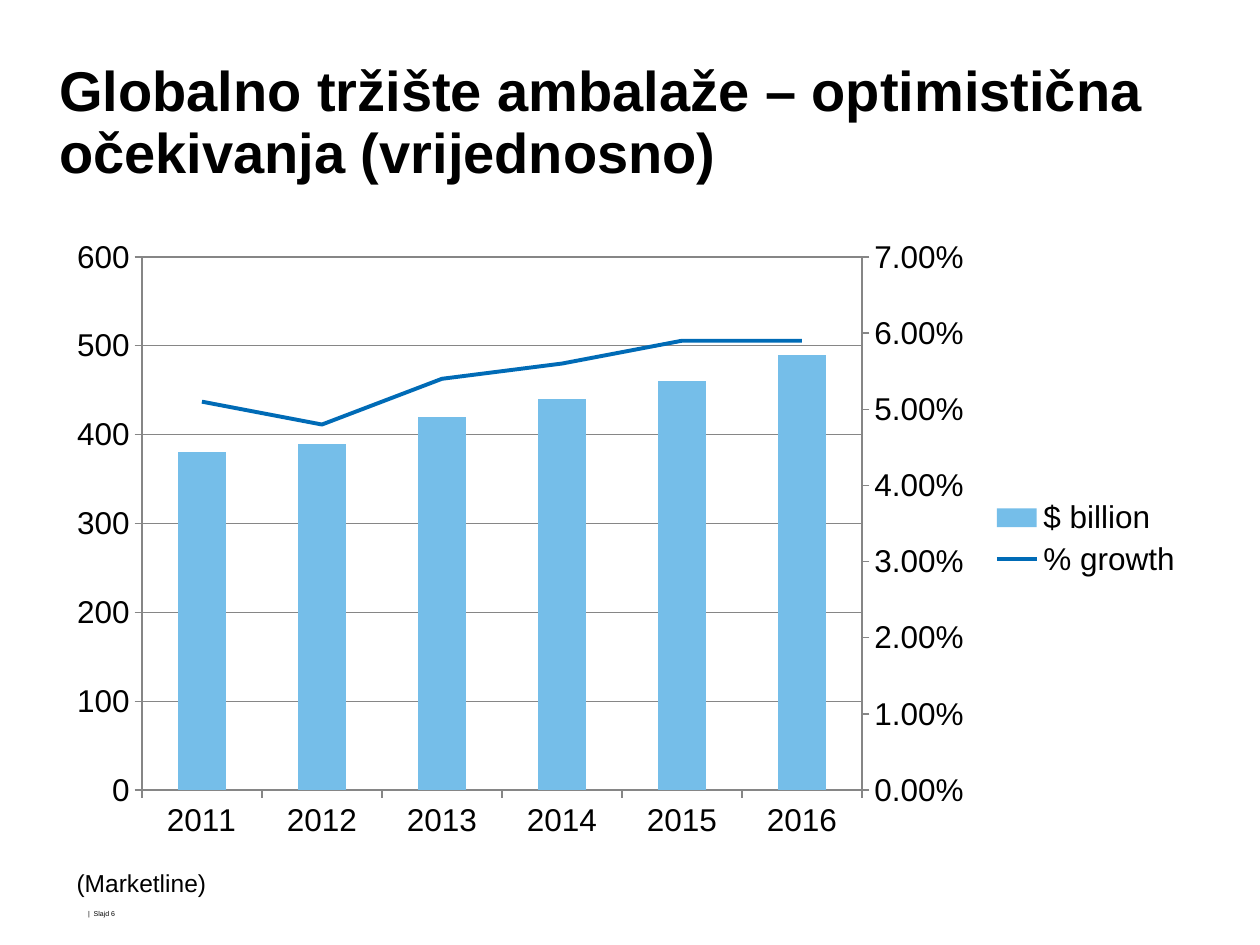
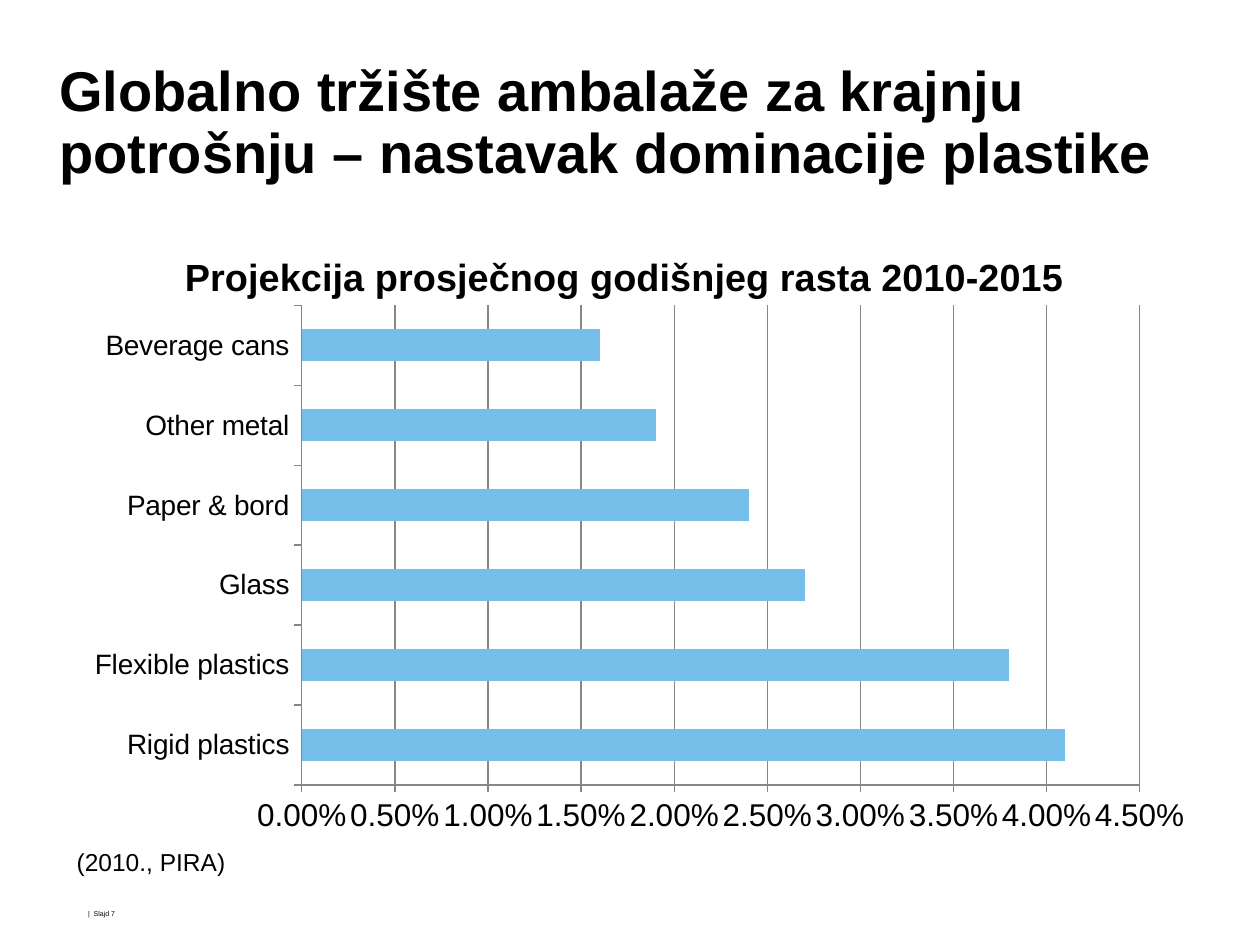
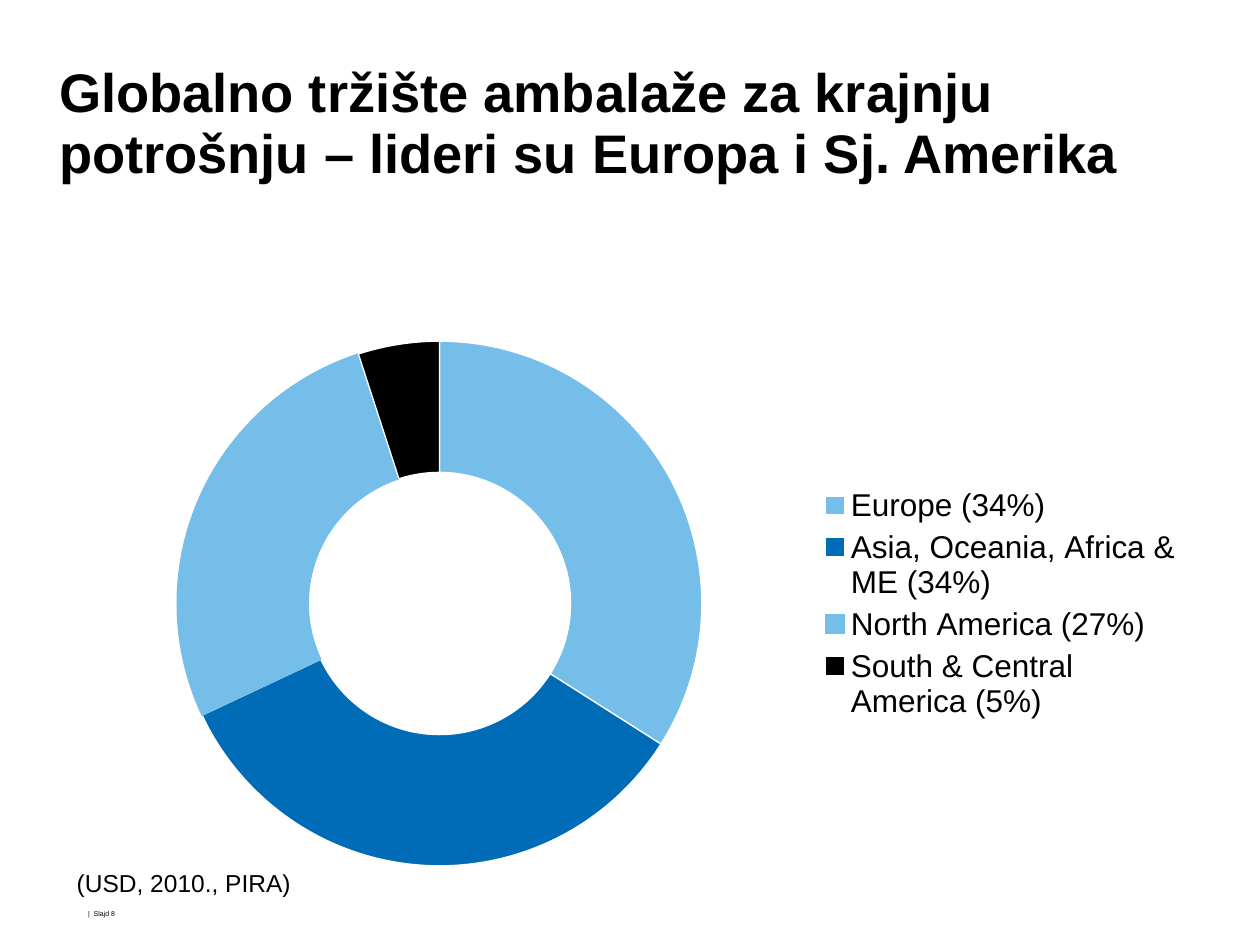
from copy import deepcopy

from pptx import Presentation
from pptx.chart.data import CategoryChartData
from pptx.dml.color import RGBColor
from pptx.enum.chart import XL_CHART_TYPE as ChartType
from pptx.enum.chart import XL_LEGEND_POSITION as LegendPosition
from pptx.enum.chart import XL_MARKER_STYLE as MarkerStyle
from pptx.enum.chart import XL_TICK_MARK as TickMark
from pptx.enum.text import MSO_ANCHOR as Anchor
from pptx.enum.text import MSO_AUTO_SIZE as AutoSize
from pptx.oxml import parse_xml
from pptx.oxml.ns import nsdecls, qn
from pptx.util import Inches, Pt

BLACK = RGBColor(0x00, 0x00, 0x00)
WHITE = RGBColor(0xFF, 0xFF, 0xFF)
SKY = RGBColor(0x75, 0xBE, 0xE9)
BLUE = RGBColor(0x00, 0x6B, 0xB6)
GRAY = RGBColor(0x86, 0x86, 0x86)
PERCENT = "0.00%"
GROWTH_AXIS_IDS = ("50010", "50020")


def set_all(target, values):
    for name, value in values.items():
        setattr(target, name, value)


def drop_children(parent, tag):
    for child in parent.findall(qn(tag)):
        parent.remove(child)


class MarketDeck:
    font_name = "Arial"
    left = 0.43
    width = 9.06
    tight = 0.04

    def __init__(self):
        self.deck = Presentation()
        set_all(self.deck, {"slide_width": Inches(10), "slide_height": Inches(7.5)})
        self.slide = None

    def style_font(self, font, size, bold=False):
        set_all(font, {"name": self.font_name, "size": Pt(size), "bold": bold})
        font.color.rgb = BLACK

    def text(self, words, box, size, bold=False, inset=None, **frame_format):
        frame = self.slide.shapes.add_textbox(*map(Inches, box)).text_frame
        set_all(frame, {"word_wrap": False, "auto_size": AutoSize.SHAPE_TO_FIT_TEXT,
                        **frame_format})
        if inset is not None:
            for side in ("left", "top", "right", "bottom"):
                setattr(frame, f"margin_{side}", Inches(inset))
        paragraph = frame.paragraphs[0]
        run = paragraph.add_run()
        run.text = words
        self.style_font(run.font, size, bold)
        return paragraph

    def start_slide(self, number, heading, size=32, width=width):
        self.slide = self.deck.slides.add_slide(self.deck.slide_layouts[6])
        title = self.text(heading, (self.left, 0.45, width, 1.05), size, True, self.tight,
                          word_wrap=True, auto_size=AutoSize.NONE)
        set_all(title, {"line_spacing": Pt(35), "space_after": Pt(8)})
        self.text(f"|  Slajd {number}", (0.66, 7.17, 0.33, 0.15), 4,
                  inset=self.tight, vertical_anchor=Anchor.BOTTOM)

    def source(self, words, width, top=6.84):
        self.text(words, (0.51, top, width, 0.34), 14)

    def chart(self, kind, categories, series, box=(left, 1.8, width, 4.95), legend=True):
        data = CategoryChartData()
        data.categories = categories
        for name, values, number_format in series:
            data.add_series(name, values, number_format)
        chart = self.slide.shapes.add_chart(kind, *map(Inches, box), data).chart
        self.style_font(chart.font, 18)
        set_all(chart, {"has_title": False, "has_legend": legend})
        if legend:
            set_all(chart.legend, {"position": LegendPosition.RIGHT,
                                   "include_in_layout": False})
        return chart

    def bars(self, chart, number_format, maximum):
        plot = chart.plots[0]
        set_all(plot, {"gap_width": 150, "vary_by_categories": False})
        plot.series[0].format.fill.solid()
        plot.series[0].format.fill.fore_color.rgb = SKY
        for axis in (chart.category_axis, chart.value_axis):
            axis.major_tick_mark = TickMark.OUTSIDE
            self.line(axis.format.line, GRAY, 0.75)
        values = chart.value_axis
        set_all(values, {"has_major_gridlines": True, "minimum_scale": 0,
                         "maximum_scale": maximum})
        self.line(values.major_gridlines.format.line, GRAY, 0.75)
        set_all(values.tick_labels, {"number_format": number_format,
                                     "number_format_is_linked": False})

    def line(self, line, color, width):
        line.color.rgb = color
        line.width = Pt(width)

    def growth_line(self, chart, number_format, maximum):
        area = chart.plots[0]._element.getparent()
        columns = area.find(qn("c:barChart"))
        growth = columns.findall(qn("c:ser"))[1]
        drop_children(growth, "c:invertIfNegative")
        category_id, value_id = GROWTH_AXIS_IDS
        line_plot = parse_xml(
            f'<c:lineChart {nsdecls("c")}><c:grouping val="standard"/>'
            f'<c:varyColors val="0"/><c:marker val="1"/>'
            f'<c:axId val="{category_id}"/><c:axId val="{value_id}"/></c:lineChart>')
        line_plot.insert(2, growth)
        columns.addnext(line_plot)

        value_axis = deepcopy(area.find(qn("c:valAx")))
        category_axis = deepcopy(area.find(qn("c:catAx")))
        drop_children(value_axis, "c:majorGridlines")
        value_axis.find(qn("c:numFmt")).set("formatCode", number_format)
        value_axis.find(qn("c:scaling")).find(qn("c:max")).set("val", str(maximum))
        value_settings = {"axId": value_id, "crossAx": category_id,
                          "axPos": "r", "crosses": "max"}
        category_settings = {"axId": category_id, "crossAx": value_id, "delete": "1"}
        for axis, settings in ((value_axis, value_settings),
                               (category_axis, category_settings)):
            for tag, value in settings.items():
                axis.find(qn(f"c:{tag}")).set("val", value)
        area.findall(qn("c:valAx"))[-1].addnext(value_axis)
        value_axis.addnext(category_axis)

        series = chart.plots[1].series[0]
        series.smooth = False
        series.marker.style = MarkerStyle.NONE
        self.line(series.format.line, BLUE, 2.25)

    def chart_title(self, chart, words):
        frame = chart.chart_title.text_frame
        frame.text = words
        self.style_font(frame.paragraphs[0].runs[0].font, 21.6, True)
        chart.chart_title.include_in_layout = False

    def plot_place(self, chart, x, y, w, h):
        area = chart.plots[0]._element.getparent()
        drop_children(area, "c:layout")
        modes = '<c:xMode val="edge"/><c:yMode val="edge"/>'
        sizes = "".join(f'<c:{tag} val="{value}"/>'
                        for tag, value in zip("xywh", (x, y, w, h)))
        area.insert(0, parse_xml(
            f'<c:layout {nsdecls("c")}><c:manualLayout><c:layoutTarget val="inner"/>'
            f'{modes}{sizes}</c:manualLayout></c:layout>'))

    def ring_colors(self, chart, colors):
        chart.plots[0].vary_by_categories = True
        for index, (fill_color, edge_color) in enumerate(colors):
            slice_format = chart.plots[0].series[0].points[index].format
            slice_format.fill.solid()
            slice_format.fill.fore_color.rgb = fill_color
            self.line(slice_format.line, edge_color, 0.75)


def main():
    market = MarketDeck()

    market.start_slide(6, "Globalno tržište ambalaže – optimistična očekivanja (vrijednosno)")
    forecast = market.chart(
        ChartType.COLUMN_CLUSTERED, [str(year) for year in range(2011, 2017)],
        [("$ billion", (380, 390, 420, 440, 460, 490), "General"),
         ("% growth", (0.051, 0.048, 0.054, 0.056, 0.059, 0.059), PERCENT)])
    market.bars(forecast, "General", 600)
    market.growth_line(forecast, PERCENT, 0.07)
    market.source("(Marketline)", 1.23)

    market.start_slide(7, "Globalno tržište ambalaže za krajnju potrošnju – "
                          "nastavak dominacije plastike")
    materials = market.chart(
        ChartType.BAR_CLUSTERED,
        ["Rigid plastics", "Flexible plastics", "Glass", "Paper & bord",
         "Other metal", "Beverage cans"],
        [("Series 1", (0.041, 0.038, 0.027, 0.024, 0.019, 0.016), PERCENT)], legend=False)
    market.bars(materials, PERCENT, 0.045)
    market.style_font(materials.category_axis.tick_labels.font, 16)
    market.chart_title(materials, "Projekcija prosječnog godišnjeg rasta 2010-2015")
    market.plot_place(materials, 0.217, 0.126, 0.734, 0.769)
    market.source("(2010., PIRA)", 1.39, top=6.67)

    market.start_slide(8, "Globalno tržište ambalaže za krajnju potrošnju – "
                          "lideri su Europa i Sj. Amerika", size=31, width=9.22)
    regions = market.chart(
        ChartType.DOUGHNUT,
        ["Europe (34%)", "Asia, Oceania, Africa & ME (34%)", "North America (27%)",
         "South & Central America (5%)"],
        [("Series 1", (34, 34, 27, 5), "General")], box=(0.51, 2.57, 8.98, 4.44))
    market.ring_colors(regions, [(SKY, WHITE), (BLUE, WHITE), (SKY, SKY), (BLACK, WHITE)])
    market.source("(USD, 2010., PIRA)", 1.91)

    market.deck.save("out.pptx")


if __name__ == "__main__":
    main()
